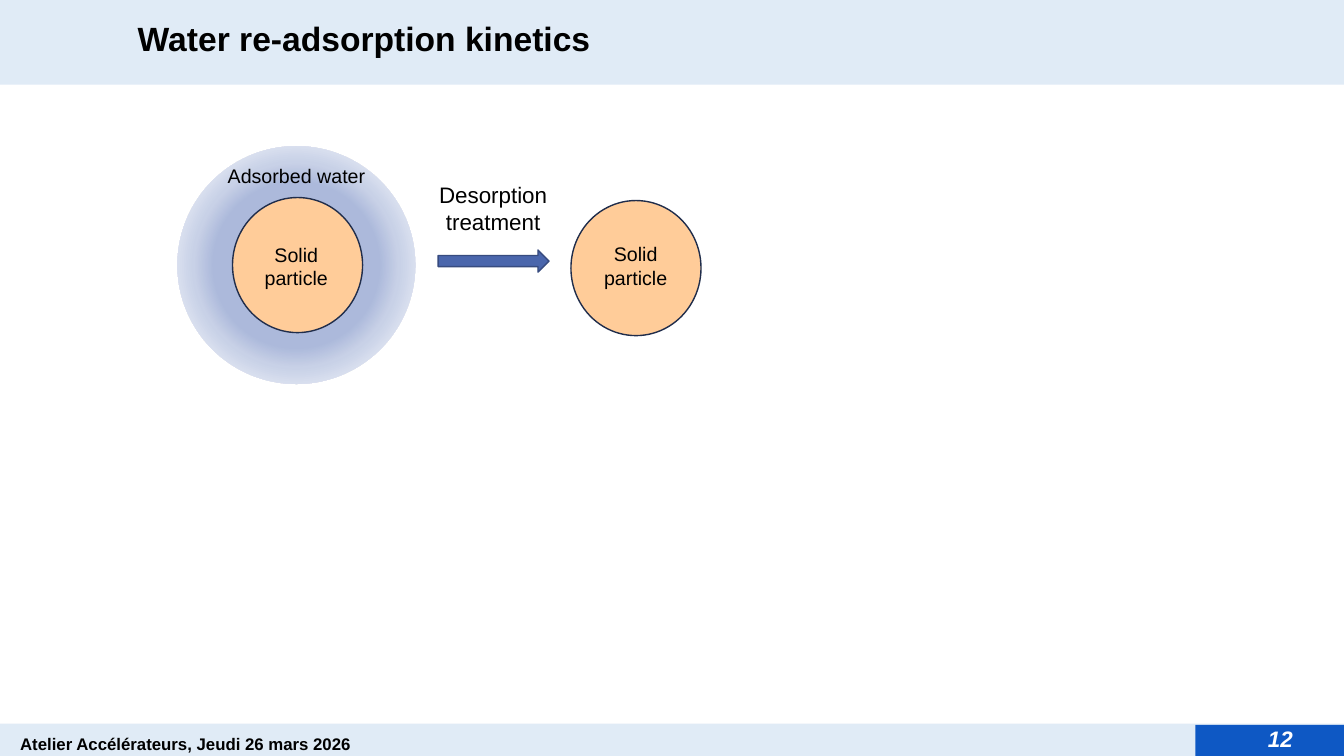
"""Build the water re-adsorption slide; boxes are in percent of the slide."""
from typing import NamedTuple

from pptx import Presentation, util as u
from pptx.dml.color import RGBColor
from pptx.enum import shapes, text
from pptx.oxml import parse_xml
from pptx.oxml.ns import nsdecls

BLACK = RGBColor(0x00, 0x00, 0x00)
WHITE = RGBColor(0xFF, 0xFF, 0xFF)
PALE = RGBColor(0xE0, 0xEB, 0xF6)
BLUE = RGBColor(0x0E, 0x58, 0xC4)
PEACH = RGBColor(0xFF, 0xCC, 0x99)
NAVY = RGBColor(0x20, 0x2D, 0x4B)
STEEL = RGBColor(0x4A, 0x66, 0xAC)
EDGE = RGBColor(0x37, 0x4B, 0x7F)
MIST = RGBColor(0xAC, 0xB9, 0xDB)
HAZE = RGBColor(0xC8, 0xD1, 0xE7)
FOG = RGBColor(0xF0, 0xF3, 0xF9)
FADE = ((17, MIST), (49, MIST), (61, HAZE), (84, FOG))

KIND = shapes.MSO_SHAPE
LEFT, MID = text.PP_ALIGN.LEFT, text.PP_ALIGN.CENTER
TOP, HALF = text.MSO_ANCHOR.TOP, text.MSO_ANCHOR.MIDDLE


class Box(NamedTuple):
    x: float
    y: float
    w: float
    h: float


class Form(NamedTuple):
    box: Box
    kind: KIND
    fill: RGBColor
    line: RGBColor | None = None


class Label(NamedTuple):
    box: Box
    words: str
    size: int
    align: text.PP_ALIGN = MID
    color: RGBColor = BLACK
    bold: bool = False
    slant: bool = False
    pad: tuple[float, float] = (0.1, 0.05)
    lead: float = 1.0
    anchor: text.MSO_ANCHOR = TOP


HALO = Form(Box(13.2, 19.33, 17.7, 31.47), KIND.OVAL, MIST)
FORMS = (
    Form(Box(0, 95.73, 100, 4.27), KIND.RECTANGLE, PALE),
    Form(Box(0, 0, 100, 11.2), KIND.RECTANGLE, PALE),
    Form(Box(88.95, 95.87, 11.05, 4.13), KIND.RECTANGLE, BLUE),
    HALO,
    Form(Box(17.3, 26.13, 9.68, 17.87), KIND.OVAL, PEACH, NAVY),
    Form(Box(42.48, 26.53, 9.68, 17.87), KIND.OVAL, PEACH, NAVY),
    Form(Box(32.6, 33.07, 8.25, 2.93), KIND.RIGHT_ARROW, STEEL, EDGE),
)
LABELS = (
    Label(Box(1.05, 96, 45.23, 3.33), "Atelier Accélérateurs, Jeudi 26 mars 2026",
          12, LEFT, bold=True, pad=(0.06, 0), lead=1.4),
    Label(Box(30.2, 23.33, 12.98, 8.53), "Desorption treatment", 16),
    Label(Box(17.55, 31.47, 9, 7.6), "Solid particle", 14),
    Label(Box(14.15, 21.07, 15.83, 4.53), "Adsorbed water", 14),
    Label(Box(42.8, 31.4, 9, 7.6), "Solid particle", 14),
    Label(Box(9.2, 2.67, 79.43, 5.73), "Water re-adsorption kinetics", 24, LEFT,
          bold=True, pad=(0.14, 0.05), lead=0.8, anchor=HALF),
    Label(Box(93.6, 95.2, 3.53, 4.93), "12", 16, LEFT, WHITE, bold=True, slant=True),
)


def place(deck, box: Box) -> tuple[int, ...]:
    wide, high = deck.slide_width, deck.slide_height
    return tuple(int(part * side / 100)
                 for part, side in zip(box, (wide, high, wide, high)))


def draw(deck, slide, form: Form):
    shape = slide.shapes.add_shape(form.kind, *place(deck, form.box))
    shape.shadow.inherit = False
    shape.fill.solid()
    shape.fill.fore_color.rgb = form.fill
    if form.line is None:
        shape.line.fill.background()
    else:
        shape.line.color.rgb = form.line
        shape.line.width = u.Pt(1)
    return shape


def blur(shape) -> None:
    stops = "".join(f'<a:gs pos="{at * 1000}"><a:srgbClr val="{color}"/></a:gs>'
                    for at, color in FADE)
    fade = parse_xml(
        f'<a:gradFill {nsdecls("a")} rotWithShape="1"><a:gsLst>{stops}</a:gsLst>'
        '<a:path path="circle"><a:fillToRect l="50000" t="50000" r="50000" b="50000"/>'
        '</a:path></a:gradFill>')
    props = shape.element.spPr
    props.replace(props.find("{*}solidFill"), fade)


def write(deck, slide, label: Label) -> None:
    frame = slide.shapes.add_textbox(*place(deck, label.box)).text_frame
    frame.word_wrap = True
    frame.auto_size = text.MSO_AUTO_SIZE.SHAPE_TO_FIT_TEXT
    frame.vertical_anchor = label.anchor
    frame.margin_left = frame.margin_right = u.Inches(label.pad[0])
    frame.margin_top = frame.margin_bottom = u.Inches(label.pad[1])
    para = frame.paragraphs[0]
    para.text = label.words
    para.alignment = label.align
    para.line_spacing = label.lead
    font = para.font
    font.name, font.size = "Arial", u.Pt(label.size)
    font.bold, font.italic = label.bold, label.slant
    font.color.rgb = label.color


def main() -> None:
    deck = Presentation()
    deck.slide_width, deck.slide_height = u.Inches(13.33), u.Inches(7.5)
    slide = deck.slides.add_slide(deck.slide_layouts[6])
    for form in FORMS:
        shape = draw(deck, slide, form)
        if form is HALO:
            blur(shape)
    for label in LABELS:
        write(deck, slide, label)
    deck.save("out.pptx")


if __name__ == "__main__":
    main()
